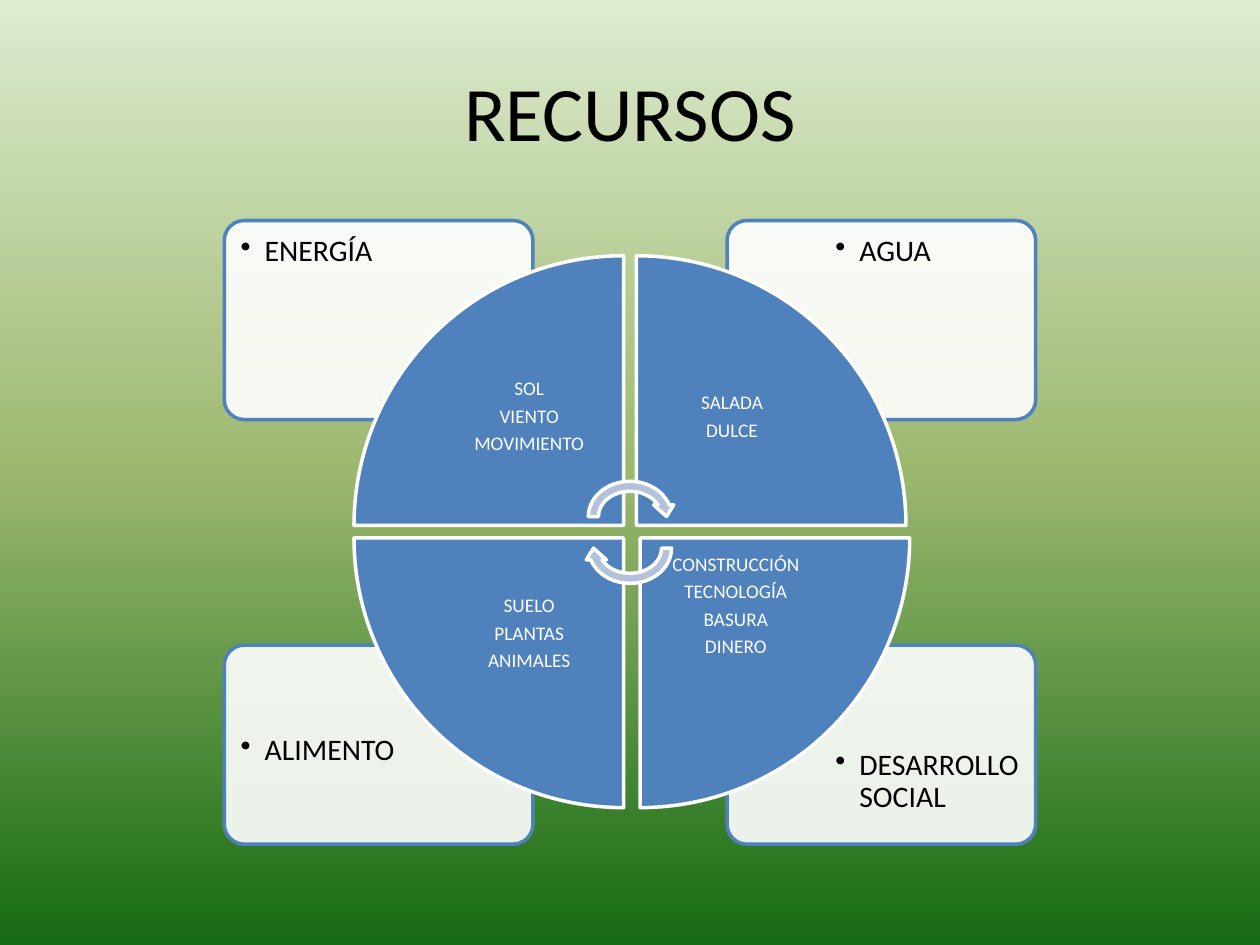
"""Build the RECURSOS slide: four cards around a cycle of four wedges."""
from copy import deepcopy

from lxml.etree import SubElement
from pptx import Presentation
from pptx.dml.color import RGBColor
from pptx.enum.shapes import MSO_SHAPE
from pptx.enum.text import MSO_ANCHOR, PP_ALIGN
from pptx.oxml.ns import qn
from pptx.util import Inches, Pt

rgb = RGBColor.from_string
BLUE, WHITE, BLACK = "4F81BD", "FFFFFF", "000000"
COLS, ROWS = 1000, 750
CELL = Inches(10) // COLS

prs = Presentation()
prs.slide_width, prs.slide_height = CELL * COLS, CELL * ROWS
s = prs.slides.add_slide(prs.slide_layouts[6])


def add_figure(kind, box, fill, line, turn=0):
    sp = s.shapes.add_shape(kind, *(CELL * n for n in box))
    sp.shadow.inherit = False
    sp.rotation = turn
    sp.fill.solid()
    sp.fill.fore_color.rgb = rgb(fill)
    sp.line.color.rgb = rgb(line)
    sp.line.width = Pt(2)
    return sp


def add_text(lines, box, size, color, top=9, bottom=9, right=9, bullet=False):
    tf = s.shapes.add_textbox(*(CELL * n for n in box)).text_frame
    tf.word_wrap = True
    tf.vertical_anchor = MSO_ANCHOR.TOP if bullet else MSO_ANCHOR.MIDDLE
    tf.margin_left, tf.margin_right = CELL * 9, CELL * right
    tf.margin_top, tf.margin_bottom = CELL * top, CELL * bottom
    for i, line in enumerate(lines):
        p = tf.add_paragraph() if i else tf.paragraphs[0]
        p.alignment = PP_ALIGN.LEFT if bullet else PP_ALIGN.CENTER
        p.line_spacing = 0.9
        p.space_after = Pt(size * 0.35) if i < len(lines) - 1 else Pt(0)
        if bullet:
            pPr = p._p.get_or_add_pPr()
            pPr.set("marL", str(CELL * 19))
            pPr.set("indent", str(-CELL * 19))
            SubElement(pPr, qn("a:buChar")).set("char", "•")
        r = p.add_run()
        r.text = line
        r.font.name = "Calibri"
        r.font.size = Pt(size)
        r.font.color.rgb = rgb(color)


bg = s.background.fill
bg.gradient()
bg.gradient_angle = 270
stops = s._element.find(".//" + qn("a:gsLst"))
stops.append(deepcopy(stops[0]))
for stop, pos, color in zip(bg.gradient_stops, (0, 0.5, 1), ("DDEBCF", "9CB86E", "156B13")):
    stop.position = pos
    stop.color.rgb = rgb(color)

add_text(["RECURSOS"], (50, 30, 900, 125), 44, BLACK)

CARDS = [
    ("DESARROLLO SOCIAL", 1, 1),
    ("ALIMENTO", 0, 1),
    ("AGUA", 1, 0),
    ("ENERGÍA", 0, 0),
]
for label, col, row in CARDS:
    x, y = 178 + 399 * col, 175 + 337 * row
    sp = add_figure(MSO_SHAPE.ROUNDED_RECTANGLE, (x, y, 245, 158), WHITE, BLUE)
    sp.adjustments[0] = 0.1
    SubElement(sp._element.spPr.find(".//" + qn("a:srgbClr")), qn("a:alpha")).set("val", "90000")
    box = (x + 4 + 73 * col, y + 3 + 40 * row, 164, 112)
    add_text([label], box, 17, BLACK, top=9 + 31 * row, right=5, bullet=True)

WEDGES = [
    (["SOL", "VIENTO", "MOVIMIENTO"], 281, 203, 1),
    (["SALADA", "DULCE"], 505, 203, 1),
    (["CONSTRUCCIÓN", "TECNOLOGÍA", "BASURA", "DINERO"], 508, 427, 2),
    (["SUELO", "PLANTAS", "ANIMALES"], 281, 427, 0),
]
for i, (lines, x, y, lift) in enumerate(WEDGES):
    add_figure(MSO_SHAPE.PIE_WEDGE, (x, y, 214, 214), BLUE, WHITE, 90 * i)
    box = (x + 63 if x < COLS / 2 else x, y + 63 if y < ROWS / 2 else y, 152, 152)
    add_text(lines, box, 11, WHITE, bottom=9 + 22 * lift)

for y, turn in ((378, 0), (403, 180)):
    add_figure(MSO_SHAPE.CIRCULAR_ARROW, (463, y, 74, 64), "B3C1DB", WHITE, turn)

prs.save("out.pptx")
